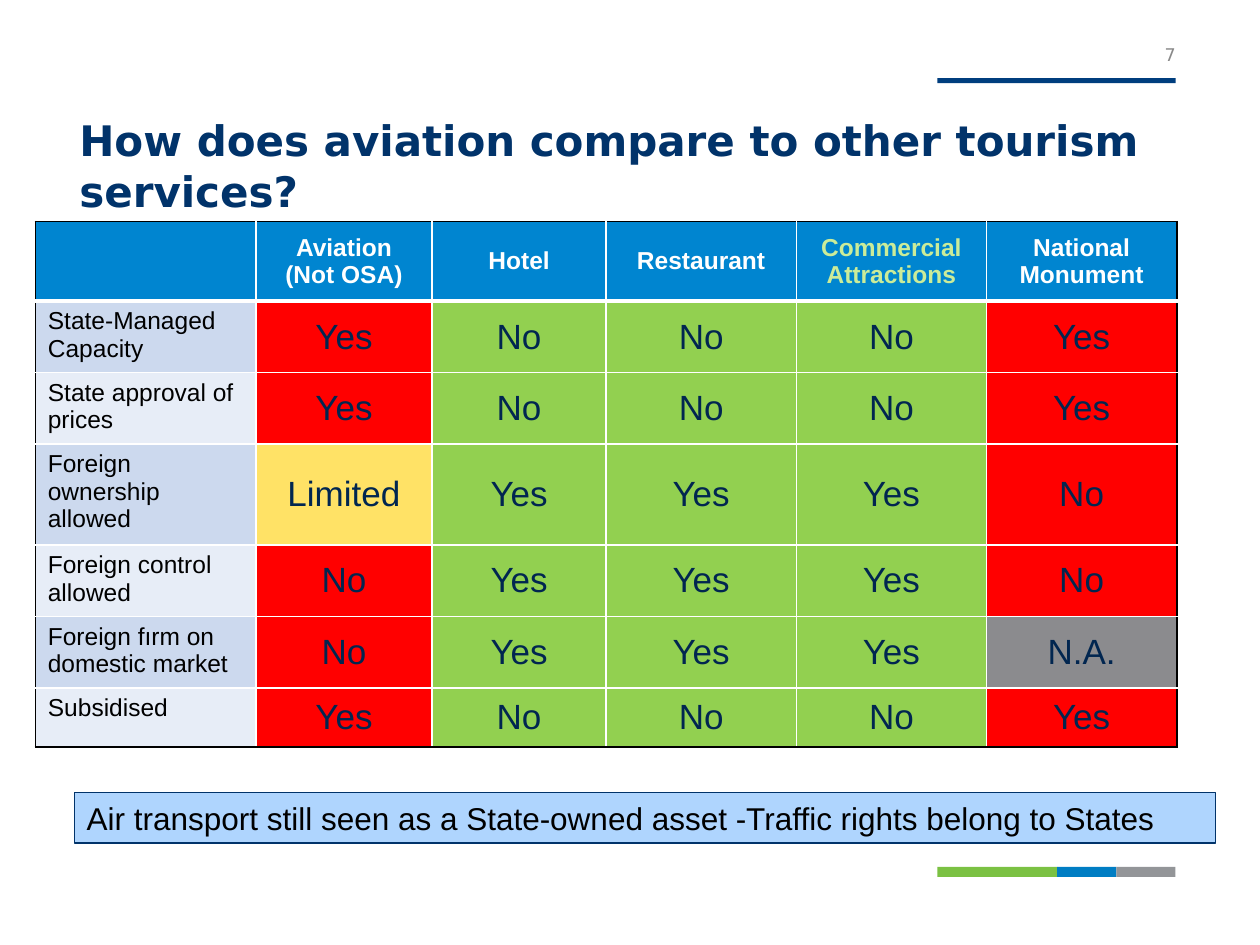
from dataclasses import dataclass

from lxml import etree
from pptx import Presentation
from pptx.dml.color import RGBColor
from pptx.enum import shapes, text
from pptx.oxml.ns import qn
from pptx.util import Inches, Pt

COLORS = {
    "navy": "01336A", "rule": "003E7E", "green bar": "7BC143", "blue bar": "007DC3",
    "grey bar": "939598", "page": "898989", "header": "0085D0", "lime": "CBEC99",
    "band dark": "CCD9EE", "band light": "E7EDF7", "answer": "012650",
    "red": "FF0000", "green": "92D050", "yellow": "FFE266", "grey": "8B8B8E",
    "note": "AFD5FE", "white": "FFFFFF", "black": "000000",
}


@dataclass
class Bar:
    left: float
    top: float
    width: float
    height: float
    color: str


@dataclass
class Criterion:
    label: str
    aviation: str
    aviation_color: str
    private: str  # shared by hotel, restaurant and commercial attractions
    monument: str
    monument_color: str = "red"


@dataclass
class Style:
    size: float
    color: str
    font: str = "Arial"
    bold: bool = False
    align: text.PP_ALIGN = text.PP_ALIGN.LEFT


BARS = [
    Bar(7.44, 0.62, 1.89, 0.04, "rule"),
    Bar(7.44, 6.88, 0.95, 0.08, "green bar"),
    Bar(8.39, 6.88, 0.47, 0.08, "blue bar"),
    Bar(8.86, 6.88, 0.47, 0.08, "grey bar"),
]
HEADERS = ["", "Aviation\v(Not OSA)", "Hotel", "Restaurant",
           "Commercial Attractions", "National Monument"]
CRITERIA = [
    Criterion("State-Managed Capacity", "Yes", "red", "No", "Yes"),
    Criterion("State approval of prices", "Yes", "red", "No", "Yes"),
    Criterion("Foreign ownership allowed", "Limited", "yellow", "Yes", "No"),
    Criterion("Foreign control allowed", "No", "red", "Yes", "No"),
    Criterion("Foreign fırm on domestic market", "No", "red", "Yes", "N.A.", "grey"),
    Criterion("Subsidised", "Yes", "red", "No", "Yes"),
]
COLUMN_WIDTHS = [1.75, 1.4, 1.38, 1.51, 1.51, 1.51]
ROW_HEIGHTS = [0.63] + [0.47] * len(CRITERIA)


def rgb(name: str) -> RGBColor:
    return RGBColor.from_string(COLORS[name])


def write(frame, words: str, style: Style) -> None:
    frame.text = words
    frame.word_wrap = True
    for paragraph in frame.paragraphs:
        paragraph.alignment = style.align
        for run in paragraph.runs:
            run.font.size = Pt(style.size)
            run.font.name = style.font
            run.font.bold = style.bold
            run.font.color.rgb = rgb(style.color)


def set_margins(frame, bottom: float = 0) -> None:
    frame.margin_left = frame.margin_top = frame.margin_right = 0
    frame.margin_bottom = Inches(bottom)


def add_bar(slide, bar: Bar):
    shape = slide.shapes.add_shape(
        shapes.MSO_SHAPE.RECTANGLE, Inches(bar.left), Inches(bar.top),
        Inches(bar.width), Inches(bar.height))
    shape.shadow.inherit = False
    shape.fill.solid()
    shape.fill.fore_color.rgb = rgb(bar.color)
    shape.line.fill.background()
    return shape


def add_border(cell, side: str, color: str, width: float) -> None:
    line = etree.SubElement(cell._tc.get_or_add_tcPr(), qn(f"a:ln{side}"),
                            w=str(Pt(width)))
    fill = etree.SubElement(line, qn("a:solidFill"))
    etree.SubElement(fill, qn("a:srgbClr"), val=COLORS[color])


def fill_cell(table, row: int, column: int, words: str, fill: str, style: Style) -> None:
    cell = table.cell(row, column)
    last_row, last_column = len(ROW_HEIGHTS) - 1, len(COLUMN_WIDTHS) - 1
    # Black around the table, white inside, heavier under the header
    outer = {"L": column == 0, "R": column == last_column,
             "T": row == 0, "B": row == last_row}
    for side, is_outer in outer.items():
        add_border(cell, side, "black" if is_outer else "white",
                   3 if row == 0 and side == "B" else 1)
    cell.fill.solid()
    cell.fill.fore_color.rgb = rgb(fill)
    is_label = row > 0 and column == 0
    cell.vertical_anchor = text.MSO_ANCHOR.TOP if is_label else text.MSO_ANCHOR.MIDDLE
    write(cell.text_frame, words, style)


def add_comparison(slide) -> None:
    table = slide.shapes.add_table(
        len(ROW_HEIGHTS), len(COLUMN_WIDTHS), Inches(0.28), Inches(1.76),
        Inches(sum(COLUMN_WIDTHS)), Inches(sum(ROW_HEIGHTS))).table
    for column, width in zip(table.columns, COLUMN_WIDTHS):
        column.width = Inches(width)
    for row, height in zip(table.rows, ROW_HEIGHTS):
        row.height = Inches(height)

    center = text.PP_ALIGN.CENTER
    for column, header in enumerate(HEADERS):
        color = "lime" if header.startswith("Commercial") else "white"
        fill_cell(table, 0, column, header, "header",
                  Style(14, color, bold=True, align=center))
    for row, item in enumerate(CRITERIA, start=1):
        band = "band dark" if row % 2 else "band light"
        fill_cell(table, row, 0, item.label, band, Style(14, "black"))
        answers = [(item.aviation, item.aviation_color),
                   *[(item.private, "green")] * 3,
                   (item.monument, item.monument_color)]
        for column, (answer, fill) in enumerate(answers, start=1):
            fill_cell(table, row, column, answer, fill,
                      Style(20, "answer", align=center))


def main() -> None:
    deck = Presentation()
    deck.slide_width, deck.slide_height = Inches(10), Inches(7.5)
    slide = deck.slides.add_slide(deck.slide_layouts[5])

    # Rule at the top and colour strip at the bottom
    for bar in BARS:
        add_bar(slide, bar)

    # Title
    title = slide.shapes.title
    title.left, title.top = Inches(0.63), Inches(1.12)
    title.width, title.height = Inches(8.65), Inches(0.67)
    set_margins(title.text_frame, bottom=0.08)
    title.text_frame.vertical_anchor = text.MSO_ANCHOR.BOTTOM
    title.text_frame.auto_size = text.MSO_AUTO_SIZE.NONE
    write(title.text_frame, "How does aviation compare to other tourism services?",
          Style(24, "navy", "DejaVu Sans", bold=True))

    # Page number
    page = slide.shapes.add_textbox(Inches(8.84), Inches(0.12), Inches(0.49), Inches(0.4))
    set_margins(page.text_frame)
    page.text_frame.vertical_anchor = text.MSO_ANCHOR.BOTTOM
    write(page.text_frame, "7", Style(10, "page", "DejaVu Sans", align=text.PP_ALIGN.RIGHT))

    add_comparison(slide)

    # Conclusion
    conclusion = add_bar(slide, Bar(0.59, 6.29, 9.06, 0.4, "note"))
    conclusion.line.color.rgb = rgb("navy")
    conclusion.line.width = Pt(0.75)
    conclusion.text_frame.vertical_anchor = text.MSO_ANCHOR.TOP
    conclusion.text_frame.auto_size = text.MSO_AUTO_SIZE.SHAPE_TO_FIT_TEXT
    write(conclusion.text_frame,
          "Air transport still seen as a State-owned asset -Traffic rights belong to States",
          Style(18, "black"))

    deck.save("out.pptx")


if __name__ == "__main__":
    main()
